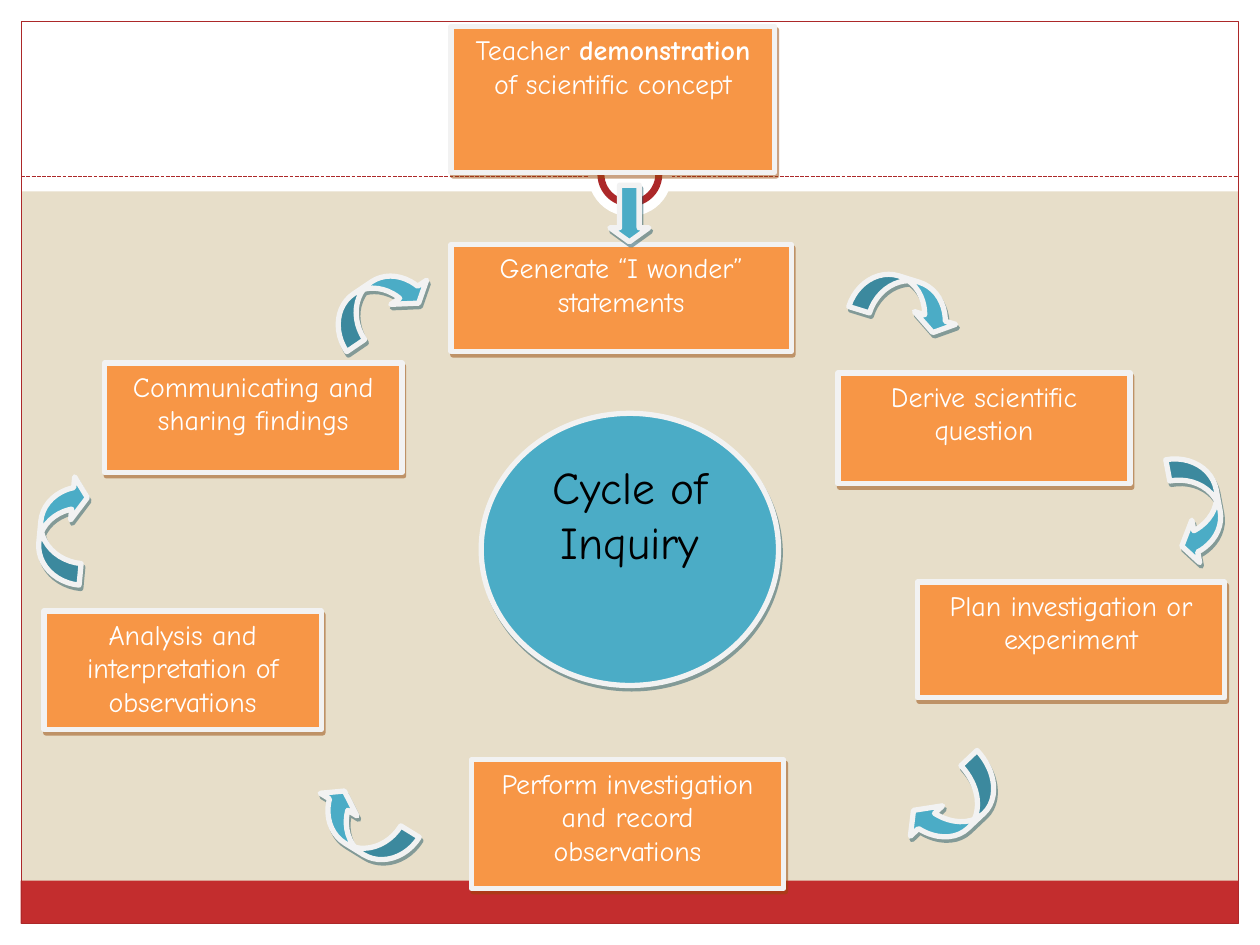
from typing import NamedTuple

from lxml import etree
from pptx import Presentation
from pptx.dml.color import RGBColor
from pptx.enum.dml import MSO_LINE
from pptx.enum.shapes import MSO_CONNECTOR, MSO_SHAPE
from pptx.enum.text import MSO_ANCHOR, PP_ALIGN
from pptx.oxml import parse_xml
from pptx.oxml.ns import qn
from pptx.util import Pt

RECT, OVAL = MSO_SHAPE.RECTANGLE, MSO_SHAPE.OVAL
DOWN, CURVED = MSO_SHAPE.DOWN_ARROW, MSO_SHAPE.CURVED_DOWN_ARROW
STRAIGHT, DASH = MSO_CONNECTOR.STRAIGHT, MSO_LINE.SQUARE_DOT
TOP, CENTER = MSO_ANCHOR.TOP, PP_ALIGN.CENTER

SAND = RGBColor(0xE7, 0xDE, 0xC9)
WHITE = RGBColor(0xFF, 0xFF, 0xFF)
BLACK = RGBColor(0x00, 0x00, 0x00)
RED = RGBColor(0xC3, 0x2D, 0x2E)
DARK_RED = RGBColor(0xAC, 0x28, 0x29)
ORANGE = RGBColor(0xF7, 0x96, 0x46)
BROWN = RGBColor(0x97, 0x47, 0x06)
TEAL = RGBColor(0x4B, 0xAC, 0xC6)
DARK_TEAL = RGBColor(0x20, 0x58, 0x67)
PALE = RGBColor(0xF2, 0xF2, 0xF2)

FONT = "Comic Neue"
W, H = 720, 540
MARGIN = 12.2
DRAWINGML = "http://schemas.openxmlformats.org/drawingml/2006/main"


class Box(NamedTuple):
    left: float
    top: float
    width: float
    height: float


class Step(NamedTuple):
    box: Box
    runs: tuple  # (text, bold) pairs


class Arrow(NamedTuple):
    box: Box
    rotation: float
    thickness: float  # first adjustment; the head is twice as wide


FRAME = Box(MARGIN, MARGIN, W - 2 * MARGIN, H - 2 * MARGIN)

STEPS = [
    Step(Box(257.8, 15.1, 185, 83.5),
         (("Teacher ", False), ("demonstration", True), (" of scientific concept", False))),
    Step(Box(257.8, 139.7, 194.4, 61.2), (("Generate “I wonder” statements", False),)),
    Step(Box(478.8, 213.1, 167, 63.4), (("Derive scientific question", False),)),
    Step(Box(524.2, 332.6, 175.7, 66.2), (("Plan investigation or experiment", False),)),
    Step(Box(269.3, 434.2, 178.6, 73.4), (("Perform investigation and record observations", False),)),
    Step(Box(25.2, 349.2, 158.4, 67.7), (("Analysis and interpretation of observations", False),)),
    Step(Box(59.8, 207.4, 169.9, 62.6), (("Communicating and sharing findings", False),)),
]

ARROWS = [
    Arrow(Box(487.4, 159.8, 62.6, 25.2), 17.2, 0.49),
    Arrow(Box(653, 278.6, 62.6, 25.2), 79.5, 0.49),
    Arrow(Box(514.1, 446.4, 62.6, 28.8), 136.7, 0.44),
    Arrow(Box(175, 460.1, 62.6, 25.2), 211.7, 0.49),
    Arrow(Box(4.3, 289.4, 62.6, 25.2), 275.4, 0.49),
    Arrow(Box(185.8, 160.6, 61.9, 25.2), 326, 0.49),
]


def add_shape(s, kind, box: Box, fill=None, line=None, weight: float = 0.75):
    sp = s.shapes.add_shape(kind, *map(Pt, box))
    sp.shadow.inherit = False
    if fill is None:
        sp.fill.background()
    else:
        sp.fill.solid()
        sp.fill.fore_color.rgb = fill
    if line is None:
        sp.line.fill.background()
    else:
        sp.line.color.rgb = line
        sp.line.width = Pt(weight)
    return sp


def add_raised(s, kind, box: Box, fill: RGBColor, shadow: RGBColor):
    """Shape with a thick pale outline and a hard half-transparent shadow."""
    sp = add_shape(s, kind, box, fill, PALE, 3)
    effects = sp._element.spPr.find(qn("a:effectLst"))
    effects.append(parse_xml(
        f'<a:outerShdw xmlns:a="{DRAWINGML}" blurRad="0" dist="{Pt(2.2)}" dir="3806000" '
        f'algn="ctr" rotWithShape="0"><a:srgbClr val="{shadow}"><a:alpha val="50000"/>'
        '</a:srgbClr></a:outerShdw>'))
    return sp


def write(sp, runs: tuple, size: float, color: RGBColor) -> None:
    tf = sp.text_frame
    tf.word_wrap = True
    tf.vertical_anchor = TOP
    p = tf.paragraphs[0]
    p.alignment = CENTER
    p.space_after = Pt(10)
    for text, bold in runs:
        r = p.add_run()
        r.text = text
        r.font.color.rgb = color
        for name, value in {"name": FONT, "size": Pt(size), "bold": bold}.items():
            setattr(r.font, name, value)


def add_backdrop(s) -> None:
    s.background.fill.solid()
    s.background.fill.fore_color.rgb = SAND
    # White margins and top band
    for box in (Box(0, H - MARGIN, W, MARGIN), Box(0, 0, W, 109.4),
                Box(0, 0, MARGIN, H), Box(W - MARGIN, 0, MARGIN, H)):
        add_shape(s, RECT, box, WHITE)
    # Red footer, frame and dashed rule
    add_shape(s, RECT, Box(11.8, 503.3, 695.6, 24.5), RED)
    add_shape(s, RECT, FRAME, line=DARK_RED)
    rule = s.shapes.add_connector(STRAIGHT, Pt(MARGIN), Pt(100.8), Pt(W - MARGIN), Pt(100.8))
    rule.line.color.rgb = DARK_RED
    rule.line.width = Pt(0.75)
    rule.line.dash_style = DASH
    etree.SubElement(rule._element.spPr, qn("a:effectLst"))
    # Ring on the rule
    add_shape(s, OVAL, Box(336, 75.6, 48, 48), WHITE)
    add_shape(s, OVAL, Box(343.4, 83, 33.1, 33.1), WHITE, DARK_RED, 4)


def main() -> None:
    prs = Presentation()
    prs.slide_width, prs.slide_height = Pt(W), Pt(H)
    s = prs.slides.add_slide(prs.slide_layouts[6])
    add_backdrop(s)

    # Steps of the cycle
    for step in STEPS:
        write(add_raised(s, RECT, step.box, ORANGE, BROWN), step.runs, 16, WHITE)

    # Centre
    hub = add_raised(s, OVAL, Box(275, 236.2, 169.9, 155.5), TEAL, DARK_TEAL)
    write(hub, (("Cycle of Inquiry", False),), 26, BLACK)

    # Arrows between the steps
    down = add_raised(s, DOWN, Box(348.5, 105.8, 22.3, 32.4), TEAL, DARK_TEAL)
    down.adjustments[0], down.adjustments[1] = 0.5, 0.36
    for arrow in ARROWS:
        sp = add_raised(s, CURVED, arrow.box, TEAL, DARK_TEAL)
        sp.rotation = arrow.rotation
        for i, value in enumerate((arrow.thickness, 2 * arrow.thickness, 0.33)):
            sp.adjustments[i] = value

    prs.save("out.pptx")


if __name__ == "__main__":
    main()
